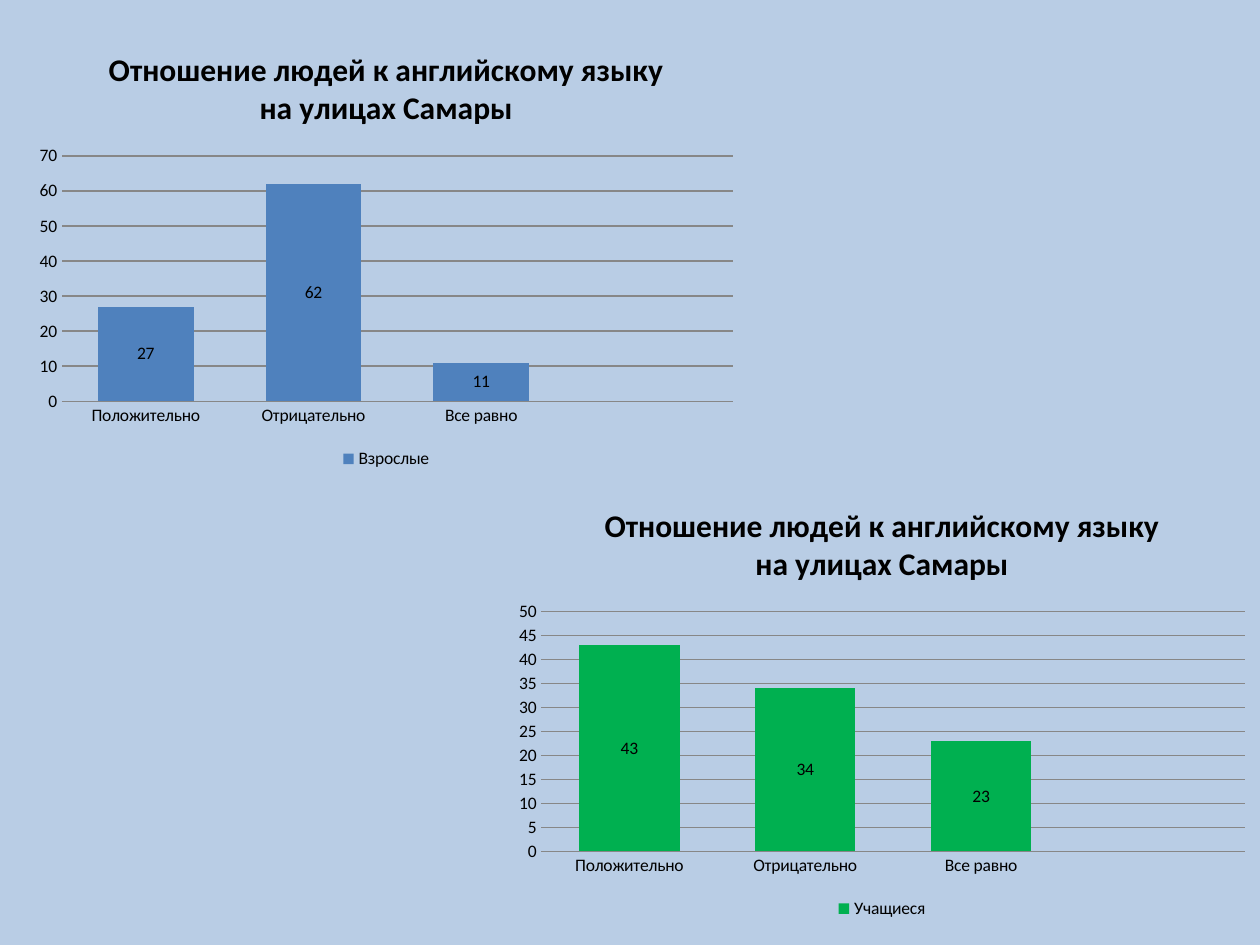
import pptx
import pptx.chart.data
import pptx.dml.color
import pptx.enum.chart
import pptx.util

Inches = pptx.util.Inches
TITLE = "Отношение людей к английскому языку на улицах Самары"
ANSWERS = ["Положительно", "Отрицательно", "Все равно", ""]


def paint(color_format, color):
    """Set a colour format to a hex colour."""
    color_format.rgb = pptx.dml.color.RGBColor.from_string(color)


def style_font(font, size, bold=False):
    """Apply the slide's typeface at the given size."""
    font.name = "Calibri"
    font.size = pptx.util.Pt(size)
    font.bold = bold
    paint(font.color, "000000")


def style_axes(chart, top, step):
    """Format the answer axis and the percentage scale."""
    answers, scale = chart.category_axis, chart.value_axis
    for axis in (answers, scale):
        axis.major_tick_mark = pptx.enum.chart.XL_TICK_MARK.NONE
        axis.minor_tick_mark = pptx.enum.chart.XL_TICK_MARK.NONE
    scale.minimum_scale, scale.maximum_scale = 0, top
    scale.major_unit = step
    scale.has_major_gridlines = True
    scale.format.line.fill.background()
    for line in (answers.format.line, scale.major_gridlines.format.line):
        line.width = pptx.util.Pt(0.75)
        paint(line.color, "878787")


def add_survey(slide, box, group, votes, color, top, step):
    """Chart one group's answers inside the box (left, top, width, height)."""
    survey = pptx.chart.data.CategoryChartData()
    survey.categories = ANSWERS
    survey.add_series(group, votes)
    chart = slide.shapes.add_chart(
        pptx.enum.chart.XL_CHART_TYPE.COLUMN_STACKED,
        *[Inches(length) for length in box], survey).chart
    style_font(chart.font, 10)

    chart.has_title = True
    heading = chart.chart_title.text_frame.paragraphs[0].add_run()
    heading.text = TITLE
    style_font(heading.font, 18, bold=True)
    chart.chart_title.include_in_layout = False

    chart.has_legend = True
    chart.legend.position = pptx.enum.chart.XL_LEGEND_POSITION.BOTTOM
    chart.legend.include_in_layout = False
    style_axes(chart, top, step)

    plot = chart.plots[0]
    plot.gap_width, plot.overlap = 75, 100
    plot.vary_by_categories = False
    columns = plot.series[0]
    columns.format.fill.solid()
    paint(columns.format.fill.fore_color, color)
    columns.data_labels.show_value = True
    style_font(columns.data_labels.font, 10)


def main():
    """Build the slide with both survey charts."""
    deck = pptx.Presentation()
    deck.slide_width, deck.slide_height = Inches(10), Inches(7.5)
    slide = deck.slides.add_slide(deck.slide_layouts[6])
    slide.background.fill.solid()
    paint(slide.background.fill.fore_color, "B9CDE5")
    add_survey(slide, (0.2, 0.21, 5.73, 3.55), "Взрослые",
               (27, 62, 11, None), "4F81BD", 70, 10)
    add_survey(slide, (4, 3.83, 6, 3.5), "Учащиеся",
               (43, 34, 23, None), "00B050", 50, 5)
    deck.save("out.pptx")


if __name__ == "__main__":
    main()
